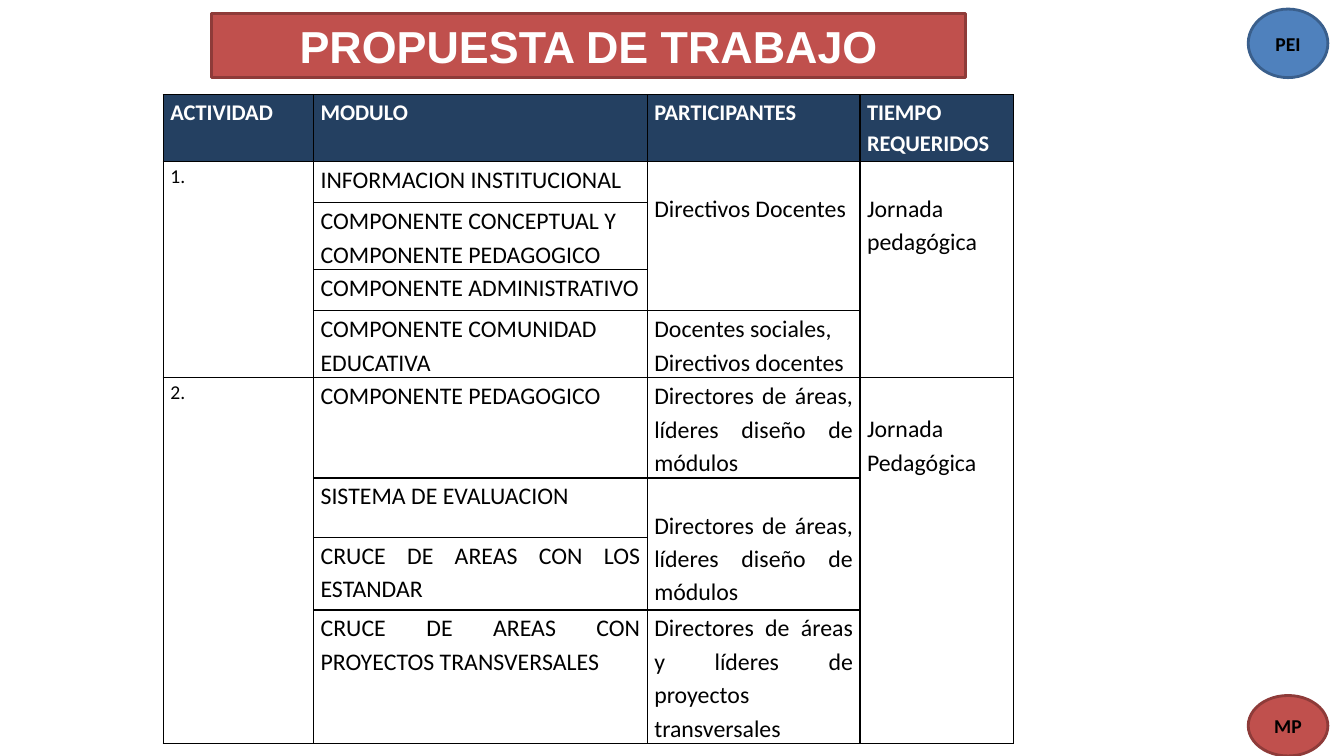
from lxml.etree import SubElement
from pptx import Presentation
from pptx.dml.color import RGBColor
from pptx.enum.shapes import MSO_SHAPE
from pptx.enum.text import MSO_ANCHOR, PP_ALIGN
from pptx.oxml.ns import qn
from pptx.util import Inches, Pt

NAVY = RGBColor(0x24, 0x40, 0x61)
RED = RGBColor(0xC0, 0x50, 0x4D)
DARK_RED = RGBColor(0x8E, 0x3B, 0x39)
BLUE = RGBColor(0x4F, 0x81, 0xBD)
DARK_BLUE = RGBColor(0x3A, 0x5F, 0x8C)
WHITE = RGBColor(0xFF, 0xFF, 0xFF)
BLACK = RGBColor(0, 0, 0)

TITLE = "PROPUESTA DE TRABAJO"
HEADERS = ["ACTIVIDAD", "MODULO", "PARTICIPANTES", "TIEMPO REQUERIDOS"]
LEFT, JUST = PP_ALIGN.LEFT, PP_ALIGN.JUSTIFY
# Per column: (text, rows spanned, alignment, top margin in inches)
COLUMNS = [
    [("1.", 4, LEFT, 0), ("2.", 4, LEFT, 0)],
    [("INFORMACION INSTITUCIONAL", 1, LEFT, 0),
     ("COMPONENTE CONCEPTUAL Y COMPONENTE PEDAGOGICO", 1, LEFT, 0),
     ("COMPONENTE ADMINISTRATIVO", 1, LEFT, 0),
     ("COMPONENTE COMUNIDAD EDUCATIVA", 1, LEFT, 0),
     ("COMPONENTE PEDAGOGICO", 1, JUST, 0),
     ("SISTEMA DE EVALUACION", 1, LEFT, 0),
     ("CRUCE DE AREAS CON LOS ESTANDAR", 1, JUST, 0),
     ("CRUCE DE AREAS CON PROYECTOS TRANSVERSALES", 1, JUST, 0)],
    [("Directivos Docentes", 3, LEFT, 0.29),
     ("Docentes sociales, Directivos docentes", 1, LEFT, 0),
     ("Directores de áreas, líderes diseño de módulos", 1, JUST, 0),
     ("Directores de áreas, líderes diseño de módulos", 2, JUST, 0.29),
     ("Directores de áreas y líderes de proyectos transversales", 1, JUST, 0)],
    [("Jornada pedagógica", 4, LEFT, 0.29), ("Jornada Pedagógica", 4, LEFT, 0.33)],
]
COL_WIDTHS = [1.49, 3.31, 2.11, 1.52]
ROW_HEIGHTS = [0.66, 0.41, 0.65, 0.41, 0.65, 0.98, 0.59, 0.72, 1.3]
BADGES = [("PEI", 0.09, 0.68, BLUE, DARK_BLUE), ("MP", 6.9, 0.6, RED, DARK_RED)]


def paint(sp, fill, line):
    sp.fill.solid()
    sp.fill.fore_color.rgb = fill
    sp.line.color.rgb = line
    sp.line.width = Pt(2)


def write(tf, text, size, color, bold=False, align=LEFT, font="Calibri"):
    p = tf.paragraphs[0]
    p.alignment = align
    r = p.add_run()
    r.text = text
    r.font.name, r.font.size, r.font.bold = font, Pt(size), bold
    r.font.color.rgb = color
    return p


def add_borders(cell):
    tc_pr = cell._tc.get_or_add_tcPr()
    for side in ("lnL", "lnR", "lnT", "lnB"):
        ln = SubElement(tc_pr, qn(f"a:{side}"), w=str(Pt(1)))
        fill = SubElement(ln, qn("a:solidFill"))
        SubElement(fill, qn("a:srgbClr"), val=str(BLACK))


def fill_cell(cell, text, size, color, bold=False, align=LEFT, top=0):
    cell.margin_left = cell.margin_right = Inches(0.07)
    cell.margin_top, cell.margin_bottom = Inches(top), 0
    write(cell.text_frame, text, size, color, bold, align).line_spacing = 1.15


def build_table(s):
    frame = s.shapes.add_table(len(ROW_HEIGHTS), len(COL_WIDTHS), Inches(1.62), Inches(0.94),
                               Inches(sum(COL_WIDTHS)), Inches(sum(ROW_HEIGHTS)))
    table = frame.table
    table.horz_banding = False
    for col, width in zip(table.columns, COL_WIDTHS):
        col.width = Inches(width)
    for i, (row, height) in enumerate(zip(table.rows, ROW_HEIGHTS)):
        row.height = Inches(height)
        for cell in row.cells:
            add_borders(cell)
            cell.margin_top = cell.margin_bottom = 0
            if i == 0:
                cell.fill.solid()
                cell.fill.fore_color.rgb = NAVY
            else:
                cell.fill.background()
    for c, (header, entries) in enumerate(zip(HEADERS, COLUMNS)):
        fill_cell(table.cell(0, c), header, 16, WHITE, bold=True)
        r = 1
        for text, span, align, top in entries:
            cell = table.cell(r, c)
            if span > 1:
                cell.merge(table.cell(r + span - 1, c))
            fill_cell(cell, text, 14 if c == 0 else 17, BLACK, align=align, top=top)
            r += span


def main():
    prs = Presentation()
    prs.slide_width, prs.slide_height = Inches(13.33), Inches(7.5)
    s = prs.slides.add_slide(prs.slide_layouts[5])

    title = s.shapes.title
    title.left, title.top = Inches(2.1), Inches(0.13)
    title.width, title.height = Inches(7.48), Inches(0.64)
    paint(title, RED, DARK_RED)
    title.text_frame.vertical_anchor = MSO_ANCHOR.MIDDLE
    write(title.text_frame, TITLE, 32, WHITE, True, PP_ALIGN.CENTER, "Arial")

    build_table(s)

    for text, top, height, fill, line in BADGES:
        sp = s.shapes.add_shape(MSO_SHAPE.OVAL, Inches(12.38), Inches(top),
                                Inches(0.79), Inches(height))
        sp.shadow.inherit = False
        paint(sp, fill, line)
        sp.text_frame.vertical_anchor = MSO_ANCHOR.MIDDLE
        write(sp.text_frame, text, 14, BLACK, True, PP_ALIGN.CENTER)

    prs.save("out.pptx")


if __name__ == "__main__":
    main()
